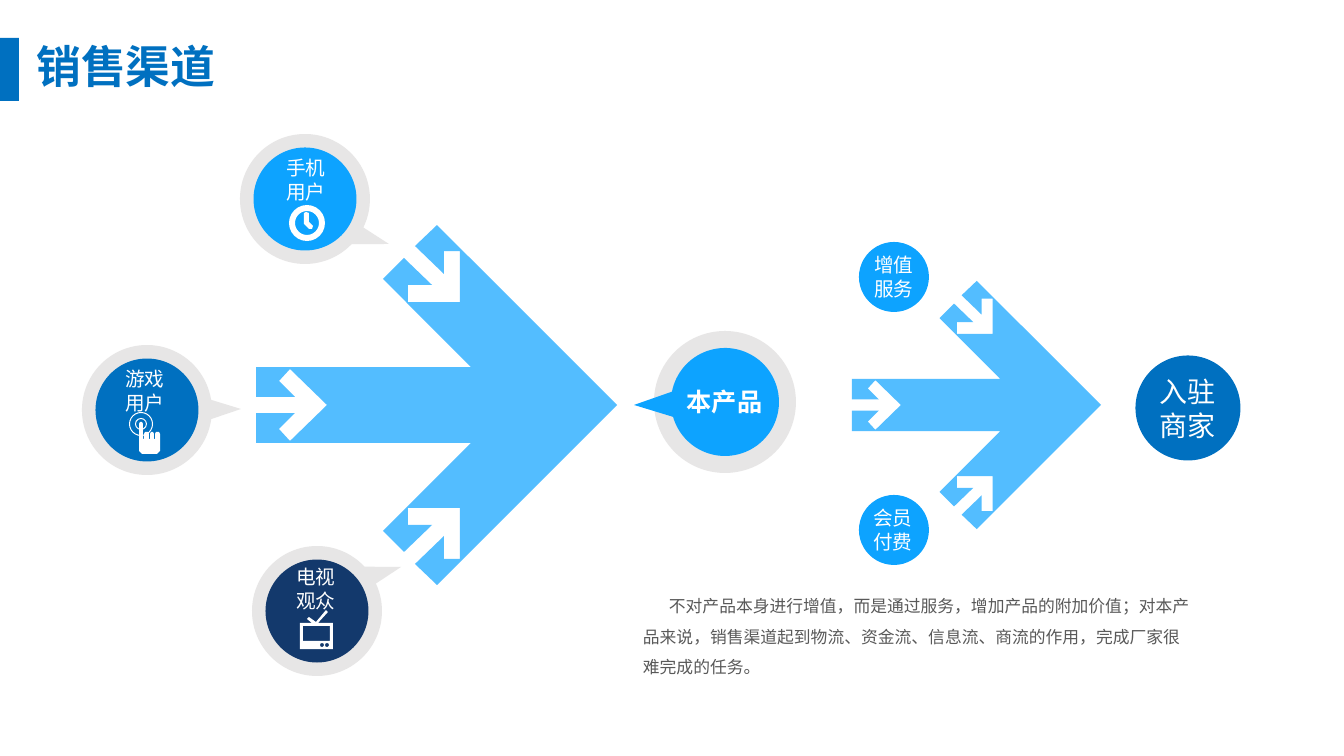
from dataclasses import dataclass
from math import cos, radians, sin

from pptx import Presentation
from pptx.dml.color import RGBColor
from pptx.enum.shapes import MSO_SHAPE as SHAPE
from pptx.enum.text import MSO_ANCHOR as ANCHOR, MSO_AUTO_SIZE as AUTO_SIZE, PP_ALIGN as ALIGN
from pptx.util import Pt

EMU_PER_PX = 914400 / 100.8


@dataclass(frozen=True)
class Theme:
    font: str = "Arial"
    blue: str = "0070C0"
    bright: str = "0DA3FF"
    sky: str = "53BDFF"
    navy: str = "13396C"
    ring: str = "E7E6E6"
    white: str = "FFFFFF"
    grey: str = "595959"
    title: int = 32
    partner: int = 20
    product: int = 18
    label: int = 14
    body: int = 12


THEME = Theme()

# Upper half of the three-tailed arrow, from the tip round to the axis, relative to the tip.
ARROW_HALF = [
    (0, 0), (-180, -180), (-202, -159), (-173, -131), (-173, -154), (-157, -154),
    (-157, -103), (-209, -103), (-209, -120), (-185, -120), (-213, -147), (-234, -126),
    (-146, -38), (-361, -38), (-361, -8), (-322, -8), (-338, -24), (-327, -36), (-290, 0),
]
CLOCK_HANDS = [(304, 213), (306, 212), (309, 213), (309, 222),
               (313, 226), (312, 229), (309, 229), (304, 224)]
TV_BODY = [(318, 623), (328, 612), (326, 610), (316, 622), (309, 617), (307, 619), (312, 623),
           (300, 623), (300, 649), (333, 649), (333, 623)]
TV_SCREEN = [(303, 626), (330, 626), (330, 641), (303, 641)]


def px(length):
    return round(length * EMU_PER_PX)


def paint(shape, color):
    shape.shadow.inherit = False
    shape.fill.solid()
    shape.fill.fore_color.rgb = RGBColor.from_string(color)
    shape.line.fill.background()


def add_preset(shapes, kind, box, color):
    shape = shapes.add_shape(kind, *map(px, box))
    paint(shape, color)
    return shape


def add_round(shapes, center, radius, color, kind=SHAPE.OVAL):
    x, y = center
    return add_preset(shapes, kind, (x - radius, y - radius, 2 * radius, 2 * radius), color)


def add_band(shapes, center, radius, thickness):
    band = add_round(shapes, center, radius, THEME.white, SHAPE.DONUT)
    band.adjustments[0] = thickness / (2 * radius)


def add_outline(shapes, color, *contours):
    """Draw closed contours as one shape; inner contours are holes."""
    first, *holes = [[(px(x), px(y)) for x, y in contour] for contour in contours]
    builder = shapes.build_freeform(*first[0], scale=1.0)
    builder.add_line_segments(first[1:], close=True)
    for hole in holes:
        builder.move_to(*hole[0])
        builder.add_line_segments(hole[1:], close=True)
    paint(builder.convert_to_shape(), color)


def arc(center, radius, start=0, end=360, steps=90):
    x, y = center
    angles = [radians(start + (end - start) * i / steps) for i in range(steps + 1)]
    return [(x + radius * cos(a), y + radius * sin(a)) for a in angles]


def add_callout(shapes, center, radius, tip, gap, color):
    """Draw a disc with a pointer to tip, its base spanning the two gap angles."""
    start, end = gap
    add_outline(shapes, color, [tip, *arc(center, radius, end, start + 360)])


def add_merging_arrow(shapes, tip, scale):
    x, y = tip
    lower = [(dx, -dy) for dx, dy in ARROW_HALF[-2:0:-1]]
    add_outline(shapes, THEME.sky,
                [(x + dx * scale, y + dy * scale) for dx, dy in ARROW_HALF + lower])


def write(frame, lines, size, color, bold=False, align=ALIGN.CENTER):
    frame.word_wrap = True
    frame.auto_size = AUTO_SIZE.NONE
    frame.vertical_anchor = ANCHOR.TOP
    style = {"name": THEME.font, "size": Pt(size), "bold": bold}
    for i, line in enumerate(lines):
        paragraph = frame.add_paragraph() if i else frame.paragraphs[0]
        paragraph.alignment = align
        run = paragraph.add_run()
        run.text = line
        for name, value in style.items():
            setattr(run.font, name, value)
        run.font.color.rgb = RGBColor.from_string(color)


def add_label(shapes, box, lines, size=THEME.label, color=THEME.white, **options):
    frame = shapes.add_textbox(*map(px, box)).text_frame
    write(frame, lines, size, color, **options)
    return frame


def add_title(slide):
    add_preset(slide.shapes, SHAPE.RECTANGLE, (0, 38, 19, 63), THEME.blue)
    title = slide.shapes.title
    for name, value in {"left": 2, "top": 34, "width": 248, "height": 65}.items():
        setattr(title, name, px(value))
    write(title.text_frame, ["销售渠道"], THEME.title, THEME.blue, bold=True)


def add_clock(shapes):
    add_band(shapes, (307, 223), 18, 6)
    add_outline(shapes, THEME.white, CLOCK_HANDS)


def add_touch(shapes):
    for radius in (6, 12):
        add_band(shapes, (141, 424), radius, 1)
    hand = [(139, 424), (140, 422), (142, 422), (143, 424), (143, 439)]
    for left, right in ((144, 149), (150, 154), (155, 160)):
        hand += [(left, 439), (left, 434), (left + 1, 432),
                 (right - 1, 432), (right, 434), (right, 439)]
    hand += [(160, 451), (157, 454), (142, 454), (139, 451)]
    add_outline(shapes, THEME.white, hand)


def add_television(shapes):
    knobs = [arc((x, 645), 2, steps=16) for x in (322, 327)]
    add_outline(shapes, THEME.white, TV_BODY, TV_SCREEN, *knobs)


def add_audiences(shapes):
    audiences = [
        ((305, 199), (389, 244), (26, 44), THEME.bright, add_clock, (264, 151), ["手机", "用户"]),
        ((147, 410), (241, 409), (-9, 8), THEME.blue, add_touch, (103, 362), ["游戏", "用户"]),
        ((317, 611), (401, 567), (-43, -25), THEME.navy, add_television, (274, 560), ["电视", "观众"]),
    ]
    for center, tip, gap, color, add_icon, corner, lines in audiences:
        add_callout(shapes, center, 65, tip, gap, THEME.ring)
        add_round(shapes, center, 51.5, color)
        add_icon(shapes)
        add_label(shapes, (*corner, 84, 57), lines)


def add_product(shapes):
    center = (725, 402)
    add_round(shapes, center, 71, THEME.ring)
    add_callout(shapes, center, 54, (634, 405), (164, 191), THEME.bright)
    add_label(shapes, (675, 381, 99, 40), ["本产品"], THEME.product, bold=True)


def add_revenues(shapes):
    for y, corner, lines in ((277, (852, 248), ["增值", "服务"]),
                             (530, (851, 501), ["会员", "付费"])):
        add_round(shapes, (894, y), 35, THEME.bright)
        add_label(shapes, (*corner, 84, 57), lines)


def add_partner(shapes):
    add_round(shapes, (1188, 408), 52.5, THEME.blue)
    add_label(shapes, (1146, 370, 84, 78), ["入驻", "商家"], THEME.partner)


def add_summary(shapes):
    summary = ("不对产品本身进行增值，而是通过服务，增加产品的附加价值；对本产品来说，"
               "销售渠道起到物流、资金流、信息流、商流的作用，完成厂家很难完成的任务。")
    frame = add_label(shapes, (633, 581, 568, 102), [summary], THEME.body, THEME.grey,
                      align=ALIGN.LEFT)
    paragraph = frame.paragraphs[0]
    paragraph.line_spacing = 1.5
    paragraph._p.get_or_add_pPr().set("indent", str(px(26)))


def main():
    deck = Presentation()
    deck.slide_width, deck.slide_height = px(1344), px(756)
    slide = deck.slides.add_slide(deck.slide_layouts[5])
    shapes = slide.shapes
    add_title(slide)
    add_merging_arrow(shapes, (617, 405), 1)
    add_audiences(shapes)
    add_product(shapes)
    add_summary(shapes)
    add_merging_arrow(shapes, (1101, 405), 0.69)
    add_revenues(shapes)
    add_partner(shapes)
    deck.save("out.pptx")


if __name__ == "__main__":
    main()
